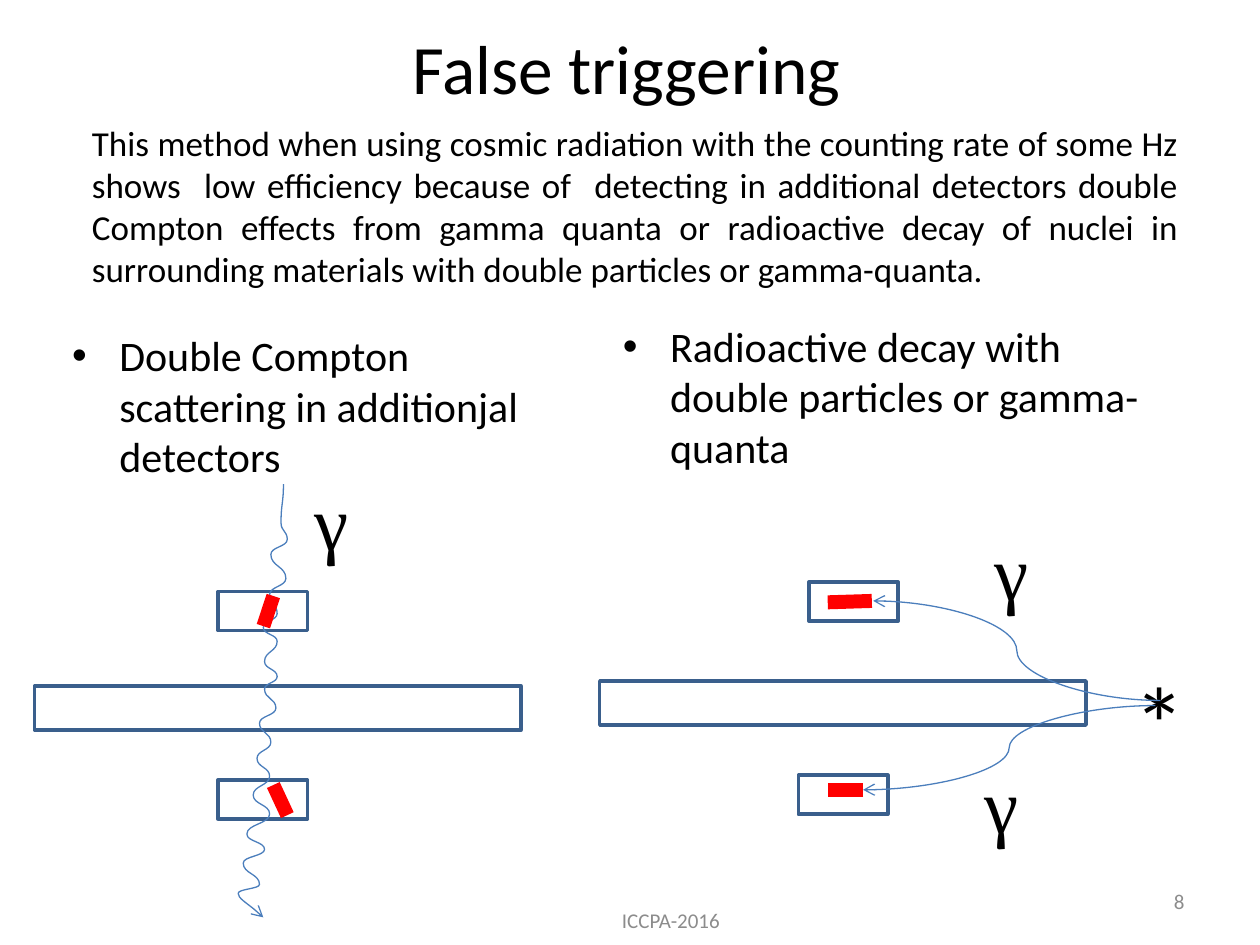
from lxml import etree
from pptx import Presentation
from pptx.dml.color import RGBColor
from pptx.enum.shapes import MSO_CONNECTOR, MSO_SHAPE
from pptx.enum.text import MSO_ANCHOR, PP_ALIGN
from pptx.oxml.ns import qn
from pptx.util import Pt

LEFT, CENTER, RIGHT, JUSTIFY = PP_ALIGN.LEFT, PP_ALIGN.CENTER, PP_ALIGN.RIGHT, PP_ALIGN.JUSTIFY
TOP, MIDDLE = MSO_ANCHOR.TOP, MSO_ANCHOR.MIDDLE
STRAIGHT, CURVE = MSO_CONNECTOR.STRAIGHT, MSO_CONNECTOR.CURVE
RECTANGLE = MSO_SHAPE.RECTANGLE

COLORS = {"text": "000000", "footer": "8C8C8C", "fill": "FFFFFF",
          "outline": "3A5F8C", "ray": "4B7EBC", "hit": "FF0000"}

# Content: (text, (left, top, width, height), format)
BULLET = {"size": 24, "bullet": True}
FOOTER = {"size": 12, "color": "footer", "anchor": MIDDLE}
GAMMA = {"size": 44, "font": "Times New Roman"}
TEXTS = [
    ("False triggering", (34, 14.8, 648, 46.8),
     {"size": 39.6, "align": CENTER, "anchor": MIDDLE}),
    ("Radioactive decay with double particles or gamma-quanta",
     (348.8, 179.6, 323.3, 135.4), BULLET),
    ("ICCPA-2016", (269.3, 511.2, 228.2, 28.8), {**FOOTER, "align": CENTER}),
    ("8", (516.2, 500.4, 167.8, 28.8), {**FOOTER, "align": RIGHT}),
    ("γ", (172.8, 267.1, 51.1, 60.5), GAMMA),
    ("*", (640.8, 372.2, 44.6, 79.9), {"size": 60}),
    ("γ", (561.2, 295.5, 51.1, 60.5), GAMMA),
    ("γ", (555.5, 428.7, 51.1, 60.5), GAMMA),
    ("Double Compton scattering in additionjal detectors", (34.1, 185, 269.3, 87.1), BULLET),
    ("This method when using cosmic radiation with the counting rate of some Hz "
     "shows  low efficiency because of  detecting in additional detectors double "
     "Compton effects from gamma quanta or radioactive decay of nuclei in "
     "surrounding materials with double particles or gamma-quanta.",
     (45.4, 65.8, 635, 104.4), {"size": 20, "align": JUSTIFY}),
]

# Detectors: small additional ones and long main ones, by left and top
SMALL, LONG = (51.1, 22.3), (277.9, 25.2)
DETECTORS = [
    (SMALL, [(124.6, 338), (124.6, 445.7), (462.2, 332.6), (456.2, 443)]),
    (LONG, [(19.8, 392), (342.7, 389.1)]),
]

# Hits and rays: (start, end)
HITS = [((156.2, 340.6), (150.5, 357.8)), ((156.2, 448.6), (164.2, 465.8)),
        ((498.2, 343.4), (473, 344.2)), ((493.2, 451.4), (473, 451.4))]
DECAY_RAYS = [((660.2, 403.2), (493.2, 451.4)), ((663.1, 400.3), (499, 343.4))]

# Turning points of the wavy gamma ray, from top to bottom
WAVE = [(162, 276.6), (160.6, 298.8), (164.2, 308.2), (154.8, 316.8), (163.4, 330.5),
        (154.1, 339.8), (158.4, 350.6), (150.5, 358.6), (158.4, 366.5), (151.2, 378),
        (158.4, 386.6), (151.2, 393.8), (157.7, 404.6), (148.3, 413.3), (154.8, 424.1),
        (146.9, 433.4), (154.1, 443.5), (144.7, 454.3), (154.1, 465.1), (141.1, 476.6),
        (151.2, 485.3), (139, 493.2), (148.3, 505.4), (136.1, 510.5), (150.5, 524.2)]


def rgb(name):
    return RGBColor.from_string(COLORS[name])


def points(values):
    return [Pt(value) for value in values]


def add_text(slide, text, box, size, font="Calibri", color="text",
             align=LEFT, anchor=TOP, bullet=False):
    frame = slide.shapes.add_textbox(*points(box)).text_frame
    frame.word_wrap = True
    frame.vertical_anchor = anchor
    paragraph = frame.paragraphs[0]
    paragraph.alignment = align
    run = paragraph.add_run()
    run.text = text
    run.font.size, run.font.name = Pt(size), font
    run.font.color.rgb = rgb(color)
    if bullet:
        properties = paragraph._p.get_or_add_pPr()
        properties.set("marL", str(Pt(27)))
        properties.set("indent", str(Pt(-27)))
        etree.SubElement(properties, qn("a:buFont"), typeface="Arial")
        etree.SubElement(properties, qn("a:buChar"), char="•")


def style_line(line, color, width, arrow=False):
    line.color.rgb = rgb(color)
    line.width = Pt(width)
    if arrow:
        etree.SubElement(line._get_or_add_ln(), qn("a:tailEnd"), type="arrow")


def add_detector(slide, corner, size):
    detector = slide.shapes.add_shape(RECTANGLE, *points(corner + size))
    detector.shadow.inherit = False
    detector.fill.solid()
    detector.fill.fore_color.rgb = rgb("fill")
    style_line(detector.line, "outline", 2)


def add_line(slide, kind, start, end, color, width, arrow=False):
    connector = slide.shapes.add_connector(kind, *points(start + end))
    style_line(connector.line, color, width, arrow)
    etree.SubElement(connector._element.spPr, qn("a:effectLst"))


def bend_segments(wave):
    """Turn each straight segment into a curve that is vertical at the turns."""
    x0, y0 = None, None
    for corner in list(wave._element.iter(qn("a:pt"))):
        x1, y1 = int(corner.get("x")), int(corner.get("y"))
        segment = corner.getparent()
        if segment.tag == qn("a:lnTo"):
            segment.tag = qn("a:cubicBezTo")
            middle = (y0 + y1) // 2
            last = segment.getnext() is None
            # The arrow end comes in along the slope of its segment
            controls = [(x0, y0 + (y1 - y0) // 5),
                        ((x0 + x1) // 2, middle)] if last else [(x0, middle), (x1, middle)]
            for x, y in controls:
                control = etree.Element(qn("a:pt"), x=str(x), y=str(y))
                corner.addprevious(control)
        x0, y0 = x1, y1


def add_wave(slide, turns):
    builder = slide.shapes.build_freeform(*points(turns[0]))
    builder.add_line_segments([tuple(points(turn)) for turn in turns[1:]], close=False)
    wave = builder.convert_to_shape()
    bend_segments(wave)
    wave.shadow.inherit = False
    wave.fill.background()
    style_line(wave.line, "ray", 0.75, arrow=True)


def main():
    deck = Presentation()
    deck.slide_width, deck.slide_height = Pt(720), Pt(540)
    slide = deck.slides.add_slide(deck.slide_layouts[6])

    # Wording and labels
    for text, box, text_format in TEXTS:
        add_text(slide, text, box, **text_format)

    # Detectors, then the particles crossing them
    for size, corners in DETECTORS:
        for corner in corners:
            add_detector(slide, corner, size)
    add_wave(slide, WAVE)
    for start, end in HITS:
        add_line(slide, STRAIGHT, start, end, "hit", 8)
    for start, end in DECAY_RAYS:
        add_line(slide, CURVE, start, end, "ray", 0.75, arrow=True)

    deck.save("out.pptx")


if __name__ == "__main__":
    main()
